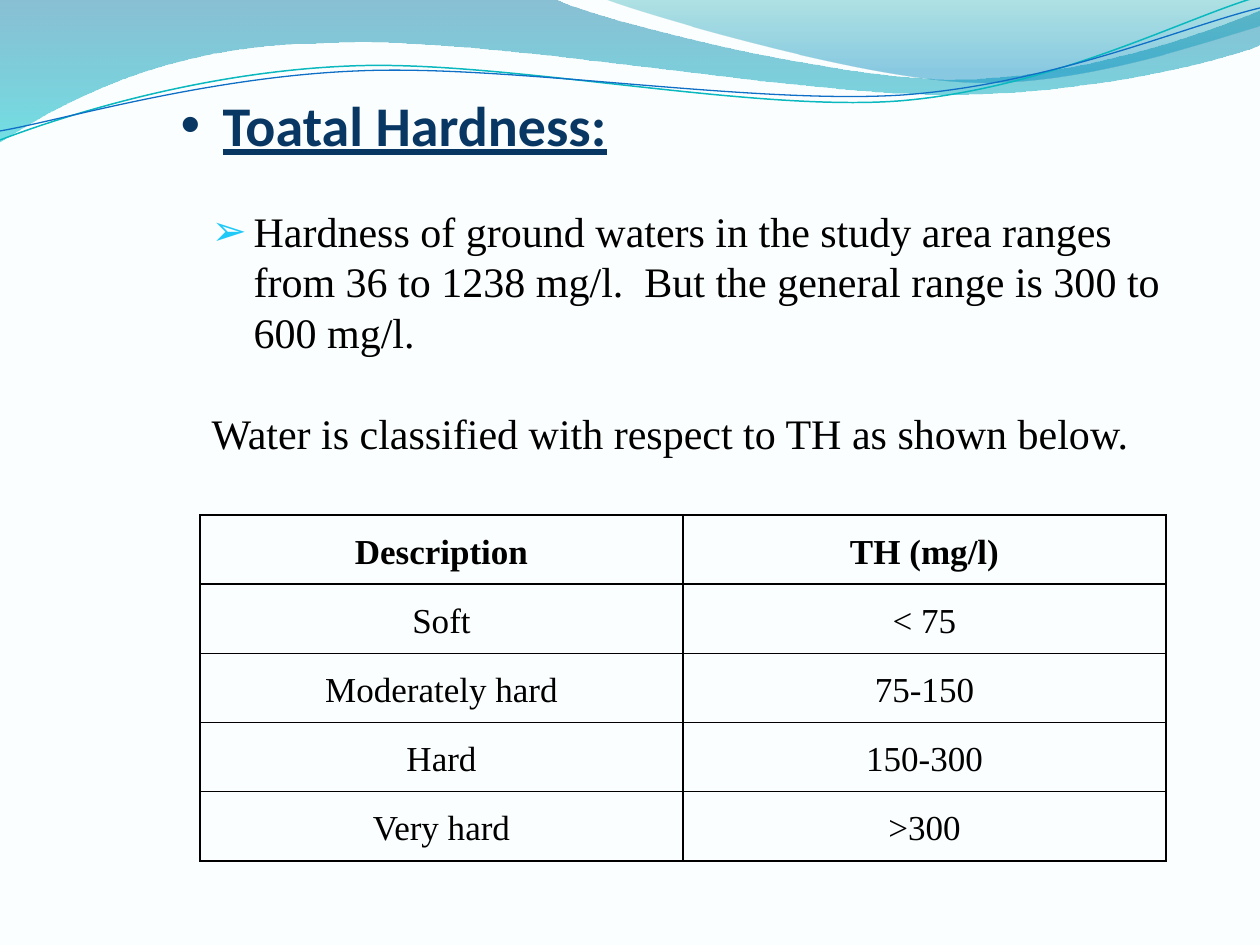
from lxml import etree
from pptx import Presentation
from pptx.dml.color import RGBColor
from pptx.enum.text import MSO_ANCHOR, MSO_AUTO_SIZE, PP_ALIGN
from pptx.oxml.ns import qn
from pptx.util import Emu, Pt

LEFT, CENTER = PP_ALIGN.LEFT, PP_ALIGN.CENTER
TOP, MIDDLE = MSO_ANCHOR.TOP, MSO_ANCHOR.MIDDLE
NO_FIT = MSO_AUTO_SIZE.NONE
EMU_PER_PX = 914400 / 126

# Content
TITLE = "Toatal Hardness:"
BODY = [
    "Hardness of ground waters in the study area ranges from 36 to 1238 mg/l.  "
    "But the general range is 300 to 600 mg/l.",
    "Water is classified with respect to TH as shown below.",
]
ROWS = [
    ("Description", "TH (mg/l)"),
    ("Soft", "< 75"),
    ("Moderately hard", "75-150"),
    ("Hard", "150-300"),
    ("Very hard", ">300"),
]
COLORS = {"background": "FBFEFE", "title": "083763", "text": "000000",
          "arrow": "20C9F8", "border": "000000"}
SERIF = "Times New Roman"

# Wave outlines in px: a pair is a line end, six numbers are a Bezier curve
WAVES = [
    {"path": [(0, -1), (554, -1), (600, 21, 837, 79, 955, 79),
              (1074, 79, 1207, 33, 1260, 11), (1261, 45),
              (1239, 55, 1096, 96, 940, 94), (784, 94, 481, 35, 324, 43),
              (163, 44, 58, 105, -1, 142)],
     "stops": [(0, "0074A1", 45), (1, "00C6CF", 55)]},
    {"path": [(604, -1), (641, 14, 859, 78, 969, 82),
              (1079, 87, 1211, 40, 1260, 26), (1260, 0)],
     "stops": [(0, "00A1A9", 30), (0.8, "008BBF", 45)]},
    {"path": [(0, 140), (60, 117, 199, 72, 349, 66),
              (499, 59, 747, 112, 898, 101), (1050, 89, 1182, 19, 1257, -3)],
     "line": ("0AB8BF", 0.85)},
    {"path": [(0, 131), (59, 121, 207, 77, 357, 71),
              (508, 64, 752, 105, 903, 95), (1053, 84, 1185, 26, 1260, 8)],
     "line": ("0F6FC6", 0.75)},
]


def px(n):
    return Emu(round(n * EMU_PER_PX))


def rgb(color):
    return RGBColor.from_string(color)


def add_outline(shapes, path, close):
    """Build a freeform, then join the three points of each curve into a Bezier."""
    points = [(px(seg[i]), px(seg[i + 1])) for seg in path for i in range(0, len(seg), 2)]
    fb = shapes.build_freeform(*points[0], scale=1.0)
    fb.add_line_segments(points[1:], close=close)
    sp = fb.convert_to_shape()
    ends = iter(list(sp.element.spPr.iter(qn("a:lnTo"))))
    for seg in path[1:]:
        first = next(ends)
        if len(seg) == 6:
            first.tag = qn("a:cubicBezTo")
            for end in (next(ends), next(ends)):
                first.append(end[0])
                end.getparent().remove(end)
    return sp


def add_wave(shapes, wave):
    sp = add_outline(shapes, wave["path"], "stops" in wave)
    sp.shadow.inherit = False
    if "line" in wave:
        color, width = wave["line"]
        sp.fill.background()
        sp.line.color.rgb = rgb(color)
        sp.line.width = Pt(width)
    else:
        sp.line.fill.background()
        sp.fill.gradient()
        sp.fill.gradient_angle = 270
        for stop, (pos, color, opacity) in zip(sp.fill.gradient_stops, wave["stops"]):
            stop.position = pos
            stop.color.rgb = rgb(color)
        clrs = sp.element.spPr.iter(qn("a:srgbClr"))
        for clr, (pos, color, opacity) in zip(clrs, wave["stops"]):
            etree.SubElement(clr, qn("a:alpha"), val=str(opacity * 1000))
    return sp


def place(sp, left, top, width, height):
    sp.left, sp.top, sp.width, sp.height = map(px, (left, top, width, height))
    tf = sp.text_frame
    tf.word_wrap = True
    tf.auto_size = NO_FIT
    tf.vertical_anchor = TOP
    return tf


def set_bullet(p, char=None, indent=0, color=None):
    pPr = p._p.get_or_add_pPr()
    pPr.set("marL", str(px(indent)))
    pPr.set("indent", str(-px(indent)))
    if color:
        clr = etree.SubElement(pPr, qn("a:buClr"))
        etree.SubElement(clr, qn("a:srgbClr"), val=color)
    if char:
        etree.SubElement(pPr, qn("a:buFont"), typeface="Arial")
        etree.SubElement(pPr, qn("a:buChar"), char=char)
    else:
        etree.SubElement(pPr, qn("a:buNone"))


def format_text(p, font, size, color, align, bold=False):
    p.alignment = align
    for r in p.runs:
        r.font.name, r.font.size, r.font.bold = font, Pt(size), bold
        r.font.color.rgb = rgb(color)


def set_borders(cell, color, width):
    tcPr = cell._tc.get_or_add_tcPr()
    for i, side in enumerate(("lnL", "lnR", "lnT", "lnB")):
        ln = etree.Element(qn("a:" + side), w=str(Pt(width)))
        fill = etree.SubElement(ln, qn("a:solidFill"))
        etree.SubElement(fill, qn("a:srgbClr"), val=color)
        tcPr.insert(i, ln)


def main():
    prs = Presentation()
    prs.slide_width, prs.slide_height = px(1260), px(945)
    s = prs.slides.add_slide(prs.slide_layouts[1])
    s.background.fill.solid()
    s.background.fill.fore_color.rgb = rgb(COLORS["background"])

    # Waves, sent behind the text
    for i, wave in enumerate(WAVES):
        s.shapes._spTree.insert(2 + i, add_wave(s.shapes, wave).element)

    # Title
    tf = place(s.shapes.title, 168, 84, 1018, 81)
    tf.text = TITLE
    p = tf.paragraphs[0]
    format_text(p, "Calibri", 32, COLORS["title"], LEFT, bold=True)
    p.runs[0].font.underline = True
    set_bullet(p, "•", 42)

    # Body
    tf = place(s.placeholders[1], 199, 199, 1008, 267)
    tf.text = "\n".join(BODY)
    for p, gap in zip(tf.paragraphs, (0, 29)):
        format_text(p, SERIF, 24, COLORS["text"], LEFT)
        p.line_spacing = 1.0
        p.space_before = Pt(gap)
    set_bullet(tf.paragraphs[0], "➢", 42, COLORS["arrow"])
    set_bullet(tf.paragraphs[1])

    # Hardness table
    table = s.shapes.add_table(len(ROWS), 2, px(200), px(515), px(966), px(346)).table
    table.first_row = table.horz_banding = False
    for i, row in enumerate(ROWS):
        for j, text in enumerate(row):
            cell = table.cell(i, j)
            cell.text = text
            cell.fill.background()
            cell.vertical_anchor = MIDDLE
            cell.margin_left = cell.margin_right = px(9)
            cell.margin_top = cell.margin_bottom = 0
            p = cell.text_frame.paragraphs[0]
            format_text(p, SERIF, 20, COLORS["text"], CENTER, bold=i == 0)
            p.line_spacing = 1.15
            set_borders(cell, COLORS["border"], 1)

    prs.save("out.pptx")


if __name__ == "__main__":
    main()
